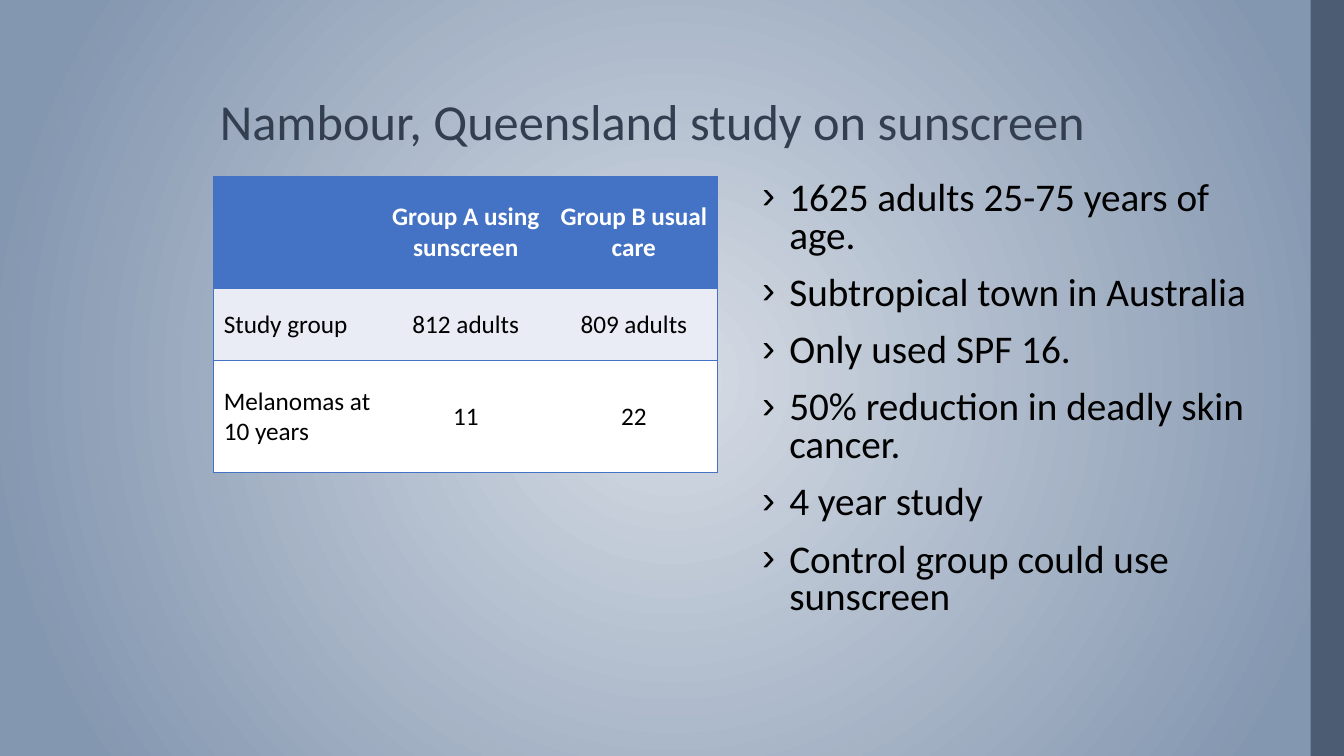
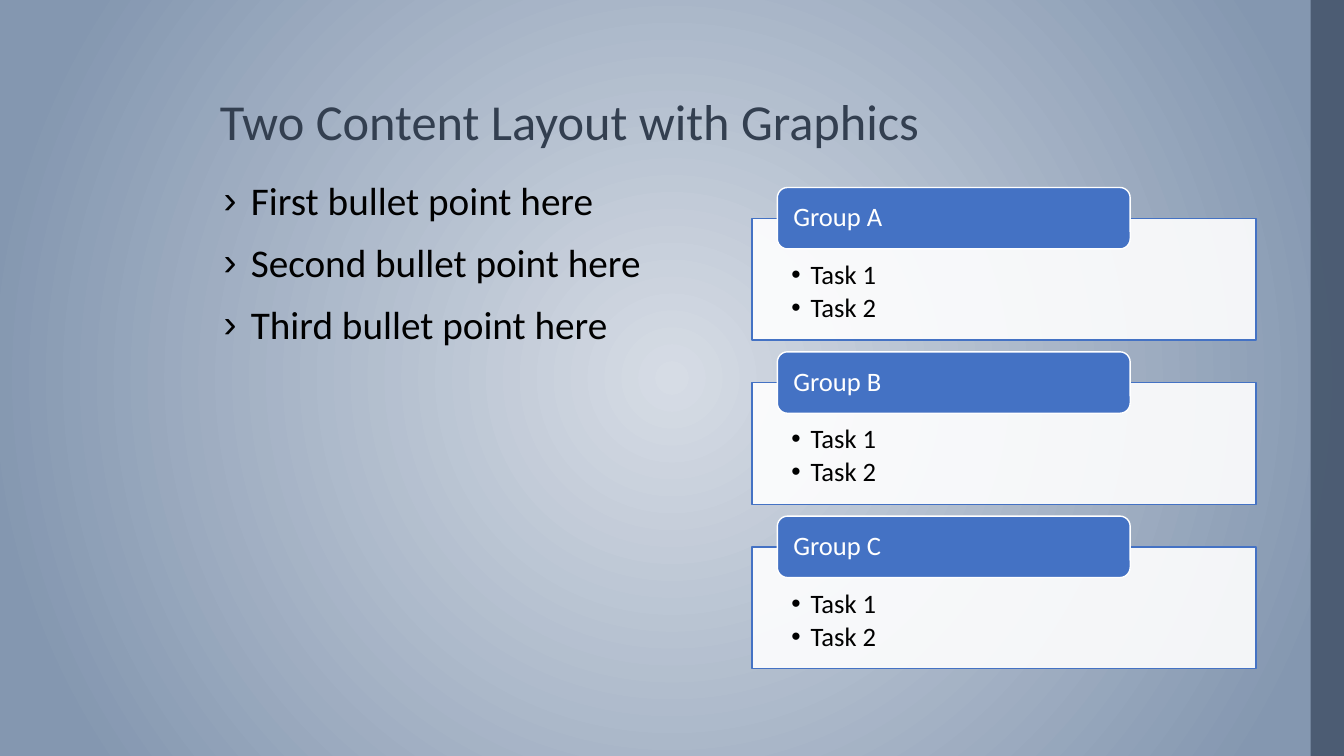
from lxml.etree import SubElement
from pptx import Presentation
from pptx.dml.color import RGBColor
from pptx.enum.shapes import MSO_SHAPE, PP_PLACEHOLDER
from pptx.enum.text import MSO_ANCHOR, MSO_AUTO_SIZE, PP_ALIGN
from pptx.oxml.ns import qn
from pptx.util import Inches, Pt

# Content
STUDY_TITLE = "Nambour, Queensland study on sunscreen"
STUDY_TABLE = [
    ("", "Group A using sunscreen", "Group B usual care"),
    ("Study group", "812 adults", "809 adults"),
    ("Melanomas at 10 years", "11", "22"),
]
STUDY_POINTS = [
    "1625 adults 25-75 years of age.",
    "Subtropical town in Australia",
    "Only used SPF 16.",
    "50% reduction in deadly skin cancer.",
    "4 year study",
    "Control group could use sunscreen",
]
GROUPS_TITLE = "Two Content Layout with Graphics"
GROUPS_POINTS = [
    "First bullet point here",
    "Second bullet point here",
    "Third bullet point here",
]
GROUPS = [
    ("Group A", ["Task 1", "Task 2"]),
    ("Group B", ["Task 1", "Task 2"]),
    ("Group C", ["Task 1", "Task 2"]),
]

# Shared style
FONT, BULLET_FONT = "Calibri", "Arial"
PLAIN_TABLE_STYLE = "{2D5ABB26-0587-4C30-8999-92F81FD0307C}"
COLORS = {
    "center": "D6DCE5", "edge": "8497B0", "band": "44546A", "title": "333F50",
    "accent": "4472C4", "row": "E9EBF5", "white": "FFFFFF", "text": "000000",
}
SLIDE_WIDTH, SLIDE_HEIGHT, BAND_LEFT = 13.33, 7.5, 13
LEFT_COLUMN, RIGHT_COLUMN = 2.12, 7.46
CONTENT_TOP, CONTENT_WIDTH, CONTENT_HEIGHT = 1.75, 5, 5
ROW_HEIGHTS = [1.11, 0.72, 1.11]
GROUP_TOP, GROUP_PITCH = 1.86, 1.63
TAB_INDENT, TAB_WIDTH, TAB_HEIGHT = 0.25, 3.5, 0.61
BOX_HEIGHT = 1.21


def color(name):
    return RGBColor.from_string(COLORS[name])


def write_text(frame, lines, size, font_color="text", bold=False,
               align=PP_ALIGN.LEFT, anchor=MSO_ANCHOR.TOP, spacing=1.0,
               before=0, after=0, bullet=None, indent=0,
               insets=(0.1, 0.05, 0.1, 0.05)):
    """Fill a text frame or table cell with equally formatted paragraphs."""
    frame.margin_left, frame.margin_top, frame.margin_right, frame.margin_bottom = (
        Inches(inset) for inset in insets)
    frame.vertical_anchor = anchor
    text_frame = getattr(frame, "text_frame", frame)
    text_frame.word_wrap = True
    for index, line in enumerate(lines):
        paragraph = text_frame.paragraphs[0] if index == 0 else text_frame.add_paragraph()
        paragraph.alignment = align
        paragraph.line_spacing = spacing
        paragraph.space_before = Pt(before if index else 0)
        paragraph.space_after = Pt(after)
        if bullet:
            properties = paragraph._p.get_or_add_pPr()
            properties.set("marL", str(Inches(indent)))
            properties.set("indent", str(-Inches(indent)))
            SubElement(properties, qn("a:buFont"), typeface=BULLET_FONT)
            SubElement(properties, qn("a:buChar"), char=bullet)
        run = paragraph.add_run()
        run.text = line
        run.font.name = FONT
        run.font.size = Pt(size)
        run.font.bold = bold
        run.font.color.rgb = color(font_color)


def add_block(slide, kind, left, top, width, height, fill, line=None, opacity=100):
    shape = slide.shapes.add_shape(
        kind, Inches(left), Inches(top), Inches(width), Inches(height))
    shape.shadow.inherit = False
    shape.fill.solid()
    shape.fill.fore_color.rgb = color(fill)
    if opacity < 100:
        fill_color = shape.element.spPr.find(qn("a:solidFill"))[0]
        SubElement(fill_color, qn("a:alpha"), val=str(opacity * 1000))
    if line:
        shape.line.color.rgb = color(line)
        shape.line.width = Pt(1)
    else:
        shape.line.fill.background()
    return shape


def remove_footers(holder):
    footers = (PP_PLACEHOLDER.DATE, PP_PLACEHOLDER.FOOTER, PP_PLACEHOLDER.SLIDE_NUMBER)
    for placeholder in list(holder.placeholders):
        if placeholder.placeholder_format.type in footers:
            holder.shapes.element.remove(placeholder.element)


def style_master(presentation, slide):
    """Give the master its radial background and the band on the right."""
    master = presentation.slide_master
    fill = master.background.fill
    fill.gradient()
    for stop, name, position in zip(fill.gradient_stops, ("center", "edge"), (0, 0.9)):
        stop.color.rgb = color(name)
        stop.position = position
    gradient = master.element.find(".//" + qn("a:gradFill"))
    gradient.remove(gradient.find(qn("a:lin")))
    circle = SubElement(gradient, qn("a:path"), {"path": "circle"})
    SubElement(circle, qn("a:fillToRect"), {side: "50000" for side in "ltrb"})

    band = add_block(slide, MSO_SHAPE.RECTANGLE, BAND_LEFT, 0,
                     SLIDE_WIDTH - BAND_LEFT, SLIDE_HEIGHT, "band", opacity=87)
    band.width = presentation.slide_width - band.left
    band.element.nvSpPr.cNvPr.set("id", "20")
    master.shapes.element.insert(2, band.element)
    remove_footers(master)
    remove_footers(slide.slide_layout)


def add_titled_slide(presentation, title):
    slide = presentation.slides.add_slide(presentation.slide_layouts[5])
    shape = slide.shapes.title
    shape.left, shape.top = Inches(2.08), Inches(0.19)
    shape.width, shape.height = Inches(10.36), Inches(1.36)
    write_text(shape.text_frame, [title], 36, "title",
               anchor=MSO_ANCHOR.BOTTOM, spacing=0.9)
    shape.text_frame.auto_size = MSO_AUTO_SIZE.NONE
    return slide


def add_points(slide, left, points, spacing):
    box = slide.shapes.add_textbox(Inches(left), Inches(CONTENT_TOP),
                                   Inches(CONTENT_WIDTH), Inches(CONTENT_HEIGHT))
    write_text(box.text_frame, points, 28, spacing=spacing, before=14,
               bullet="›", indent=0.27)


def set_borders(cell, sides):
    properties = cell._tc.get_or_add_tcPr()
    for index, side in enumerate(sides):
        border = properties.makeelement(
            qn(f"a:ln{side}"), {"w": str(Pt(1)), "cmpd": "sng"})
        properties.insert(index, border)
        fill = SubElement(border, qn("a:solidFill"))
        SubElement(fill, qn("a:srgbClr"), val=COLORS["accent"])
        SubElement(border, qn("a:prstDash"), val="solid")


def add_study_table(slide):
    column_count = len(STUDY_TABLE[0])
    table = slide.shapes.add_table(
        len(STUDY_TABLE), column_count, Inches(LEFT_COLUMN), Inches(CONTENT_TOP),
        Inches(CONTENT_WIDTH), Inches(sum(ROW_HEIGHTS))).table
    table.horz_banding = False
    table._tbl.tblPr.find(qn("a:tableStyleId")).text = PLAIN_TABLE_STYLE
    for row, height in zip(table.rows, ROW_HEIGHTS):
        row.height = Inches(height)
    row_fills = ("accent", "row", "white")
    column_sides = ["LTB"] + ["TB"] * (column_count - 2) + ["RTB"]
    for row_index, (values, fill) in enumerate(zip(STUDY_TABLE, row_fills)):
        header = row_index == 0
        for column_index, value in enumerate(values):
            cell = table.cell(row_index, column_index)
            cell.fill.solid()
            cell.fill.fore_color.rgb = color(fill)
            set_borders(cell, column_sides[column_index])
            if value:
                write_text(cell, [value], 18, "white" if header else "text",
                           bold=header, anchor=MSO_ANCHOR.MIDDLE,
                           align=PP_ALIGN.CENTER if column_index else PP_ALIGN.LEFT)


def add_groups(slide):
    for index, (name, tasks) in enumerate(GROUPS):
        top = GROUP_TOP + index * GROUP_PITCH
        box = add_block(slide, MSO_SHAPE.RECTANGLE, RIGHT_COLUMN, top + TAB_HEIGHT / 2,
                        CONTENT_WIDTH, BOX_HEIGHT, "white", "accent", opacity=90)
        write_text(box.text_frame, tasks, 19, spacing=0.9, after=3, bullet="•",
                   indent=0.19, insets=(0.39, 0.43, 0.39, 0.15))
        tab = add_block(slide, MSO_SHAPE.ROUNDED_RECTANGLE, RIGHT_COLUMN + TAB_INDENT,
                        top, TAB_WIDTH, TAB_HEIGHT, "accent", "white")
        write_text(tab.text_frame, [name], 19, "white", anchor=MSO_ANCHOR.MIDDLE,
                   spacing=0.9, insets=(0.13, 0, 0.13, 0))


def main():
    presentation = Presentation()
    presentation.slide_width = Inches(SLIDE_WIDTH)
    presentation.slide_height = Inches(SLIDE_HEIGHT)

    # Study slide
    slide = add_titled_slide(presentation, STUDY_TITLE)
    style_master(presentation, slide)
    add_study_table(slide)
    add_points(slide, RIGHT_COLUMN, STUDY_POINTS, spacing=0.8)

    # Groups slide
    slide = add_titled_slide(presentation, GROUPS_TITLE)
    add_points(slide, LEFT_COLUMN, GROUPS_POINTS, spacing=0.9)
    add_groups(slide)

    presentation.save("out.pptx")


if __name__ == "__main__":
    main()
